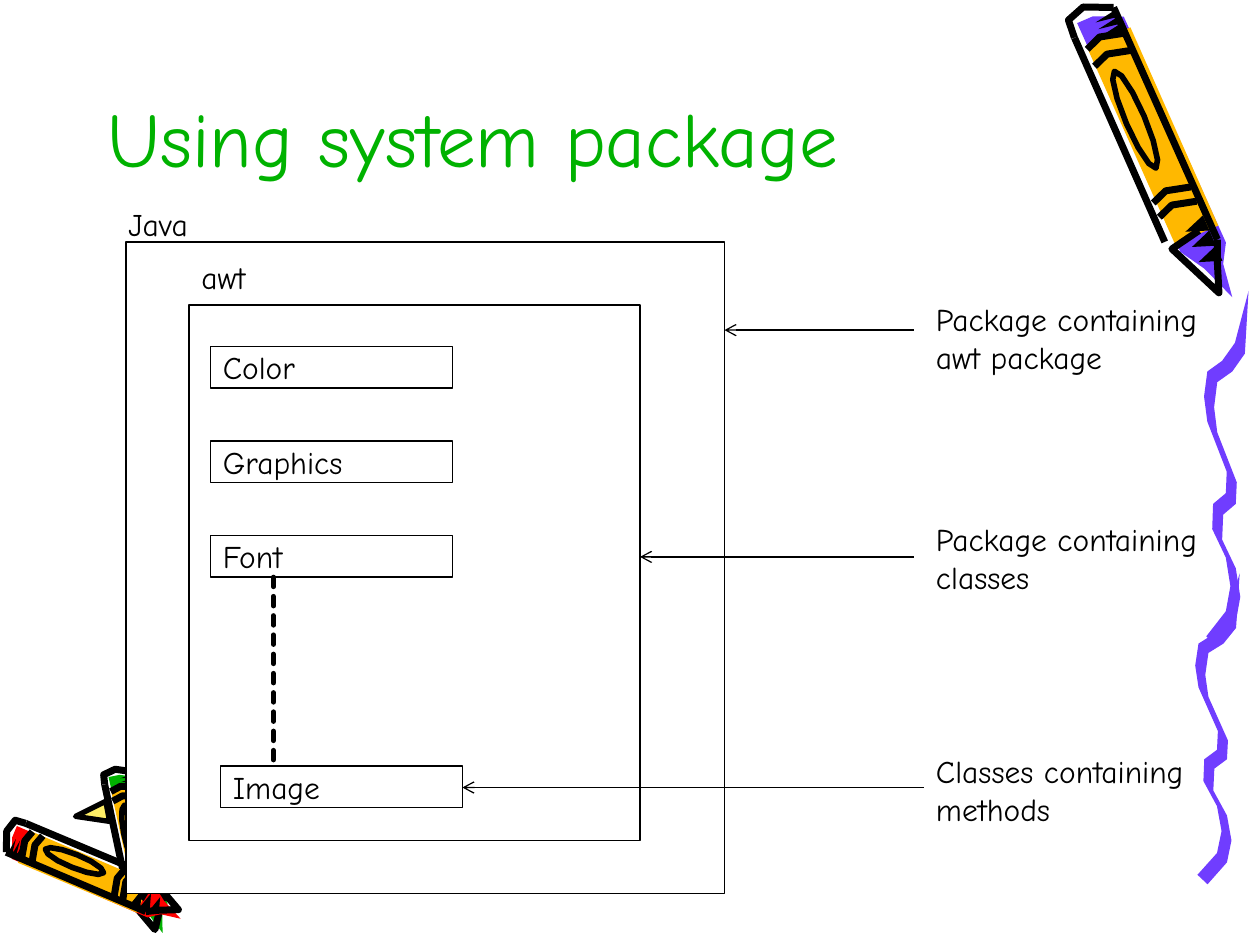
from dataclasses import dataclass
from math import cos, hypot, pi, sin

from pptx import Presentation
from pptx.dml.color import RGBColor
from pptx.enum import dml, shapes, text
from pptx.oxml import parse_xml
from pptx.oxml.ns import nsdecls
from pptx.util import Inches, Pt


@dataclass(frozen=True)
class Theme:
    font: str = "Comic Neue"
    title: int = 44
    body: int = 18
    thin: float = 0.75
    dash: float = 2.75
    black: str = "000000"
    white: str = "FFFFFF"
    green: str = "00B200"
    purple: str = "703DFF"
    gold: str = "FFB800"
    red: str = "FF0000"
    cream: str = "FFEF66"


THEME = Theme()

# Crayon parts as (along, across): along runs 0 to 1 from cap to tip,
# across is a share of the width, with 0 on the axis.
WAX = [(0.02, -0.46), (0.02, -0.1), (0.06, 0.49), (0.86, 0.59), (0.92, 0.36),
       (1.03, 0.26), (0.91, -0.04), (0.83, -0.36)]
BODY = [(0.1, -0.47), (0.1, 0.53), (0.8, 0.58), (0.8, -0.4)]
CAP = [(0.06, -0.63), (0, -0.6), (-0.02, -0.21), (0.02, 0.37)]
SIDES = [[(0.06, -0.63), (0.78, -0.58)], [(0.02, 0.37), (0.84, 0.45)]]
TIP = [(0.79, 0.17), (0.81, -0.5), (1, 0.04), (0.9, 0.28), (0.84, 0.45)]
BANDS = (0.11, 0.17, 0.65, 0.7)
TEETH = ((0.03, 0.1), (0.75, 0.91))

# Middle of the squiggle, from top to bottom, as shares of its box.
WAVE = [(0.97, 0), (0.78, 0.16), (0.5, 0.21), (0.17, 0.24), (0.1, 0.31),
        (0.17, 0.38), (0.6, 0.52), (0.58, 0.58), (0.3, 0.61), (0.28, 0.68),
        (0.58, 0.76), (0.68, 0.84), (0.58, 0.91), (0.15, 0.98)]


def rgb(name):
    return RGBColor.from_string(getattr(THEME, name))


def assign(item, values):
    for key, value in values.items():
        setattr(item, key, value)


def place(shape, *box):
    assign(shape, dict(zip(("left", "top", "width", "height"), map(Inches, box))))


def write(shape, words, size=THEME.body, color="black", **frame):
    body = shape.text_frame
    body.text = words
    assign(body, {"word_wrap": True, **frame})
    para = body.paragraphs[0]
    para.alignment = text.PP_ALIGN.LEFT
    font = para.runs[0].font
    assign(font, {"name": THEME.font, "size": Pt(size), "bold": False})
    font.color.rgb = rgb(color)


def paint(shape, fill=None, ink=0):
    """Fill with a theme colour and outline in black, ink points wide."""
    shape.shadow.inherit = False
    for part, color in ((shape.fill, fill), (shape.line.fill, ink and "black")):
        if color:
            part.solid()
            part.fore_color.rgb = rgb(color)
        else:
            part.background()
    if ink:
        shape.line.width = Pt(ink)


def draw(slide, dots, fill=None, ink=0, close=True):
    """Draw an outline through dots given in inches."""
    grid = [(1000 * x, 1000 * y) for x, y in dots]
    pen = slide.shapes.build_freeform(*grid[0], scale=Inches(1) / 1000)
    pen.add_line_segments(grid[1:], close=close)
    paint(pen.convert_to_shape(), fill, ink)


def add_crayon(slide, cap, tip, width, wax, ink):
    """Draw a crayon between two points; a negative width mirrors it."""
    run, rise = tip[0] - cap[0], tip[1] - cap[1]
    side = width / hypot(run, rise)

    def turn(dots):
        return [(cap[0] + u * run + v * side * rise,
                 cap[1] + u * rise - v * side * run) for u, v in dots]

    draw(slide, turn(WAX), wax)
    draw(slide, turn(BODY), "gold")
    for start, end in TEETH:
        step = (end - start) / 6
        jags = [(start + i * step, 0.37 if i % 2 == 0 else -0.1) for i in range(7)]
        draw(slide, turn(jags), "black")

    bands = [[(u, -0.48), (u - 0.02, -0.14), (u, 0.37)] for u in BANDS]
    for stroke in (CAP, TIP, *SIDES, *bands):
        draw(slide, turn(stroke), ink=ink, close=False)
    turns = [i * pi / 6 for i in range(12)]
    oval = [(0.38 - 0.17 * cos(a), -0.14 + 0.2 * sin(a)) for a in turns]
    draw(slide, turn(oval), ink=ink * 0.8)


def add_wave(slide, left, top, width, height):
    """Draw a ribbon along WAVE that starts as a point."""
    edges = []
    for sign in (-1, 1):
        edges.append([(left + width * (x + sign * 0.11 * min(i, 1)),
                       top + height * (y + sign * 0.015 * min(i, 1)))
                      for i, (x, y) in enumerate(WAVE)])
    draw(slide, edges[0] + edges[1][::-1], "purple")


def add_art(slide):
    draw(slide, [(0.84, 6.36), (0.6, 6.48), (0.87, 6.52)], "cream", 3)
    add_crayon(slide, (0.97, 6.12), (1.22, 7.38), 0.25, "green", 4)
    add_crayon(slide, (0.06, 6.66), (1.42, 7.21), -0.27, "red", 4)
    for box in ((9.49, 4.55, 0.36, 2.48), (9.56, 2.31, 0.36, 2.84)):
        add_wave(slide, *box)
    add_crayon(slide, (8.69, 0.07), (9.66, 2.33), 0.38, "purple", 4)


def add_box(slide, box, words=None):
    shape = slide.shapes.add_shape(shapes.MSO_SHAPE.RECTANGLE, *map(Inches, box))
    paint(shape, "white", THEME.thin)
    if words:
        write(shape, words, vertical_anchor=text.MSO_ANCHOR.MIDDLE)


def add_label(slide, box, words):
    shape = slide.shapes.add_textbox(*map(Inches, box))
    write(shape, words, auto_size=text.MSO_AUTO_SIZE.SHAPE_TO_FIT_TEXT)


def add_line(slide, ends, width=THEME.thin, dash=None, arrow=False):
    """Join two points; an arrow points at the first one."""
    link = slide.shapes.add_connector(shapes.MSO_CONNECTOR.STRAIGHT, *map(Inches, ends))
    link.line.color.rgb = rgb("black")
    assign(link.line, {"width": Pt(width), "dash_style": dash})
    stroke = link.line._get_or_add_ln()
    if dash:
        stroke.set("cap", "rnd")
    if arrow:
        stroke.append(parse_xml(f'<a:headEnd {nsdecls("a")} type="arrow"/>'))
    link._element.spPr.append(parse_xml(f'<a:effectLst {nsdecls("a")}/>'))


def add_title(slide, words):
    title = slide.shapes.title
    place(title, 0.75, 0.17, 7.51, 1.33)
    write(title, words, THEME.title, "green", vertical_anchor=text.MSO_ANCHOR.BOTTOM)


def add_packages(slide):
    add_box(slide, (1, 1.92, 4.75, 5.17))
    add_box(slide, (1.5, 2.42, 3.58, 4.25))
    for row, name in enumerate(("Color", "Graphics", "Font")):
        add_box(slide, (1.67, 2.75 + 0.75 * row, 1.92, 0.33), name)
    add_box(slide, (1.75, 6.08, 1.92, 0.33), "Image")
    add_label(slide, (0.92, 1.58, 1.17, 0.4), "Java")
    add_label(slide, (1.5, 2, 1.25, 0.4), "awt")
    add_line(slide, (2.17, 4.58, 2.17, 6.08), THEME.dash, dml.MSO_LINE.SQUARE_DOT)


def add_notes(slide):
    notes = [
        (5.75, 7.25, 2.62, 2.33, "Package containing awt package"),
        (5.08, 7.25, 4.42, 4.08, "Package containing classes"),
        (3.67, 7.33, 6.25, 5.92, "Classes containing methods"),
    ]
    for tip, tail, level, top, words in notes:
        add_line(slide, (tip, level, tail, level), arrow=True)
        add_label(slide, (7.33, top, 2.42, 0.7), words)


def main():
    deck = Presentation()
    assign(deck, {"slide_width": Inches(10), "slide_height": Inches(7.5)})
    slide = deck.slides.add_slide(deck.slide_layouts[5])
    add_art(slide)
    add_title(slide, "Using system package")
    add_packages(slide)
    add_notes(slide)
    deck.save("out.pptx")


if __name__ == "__main__":
    main()
